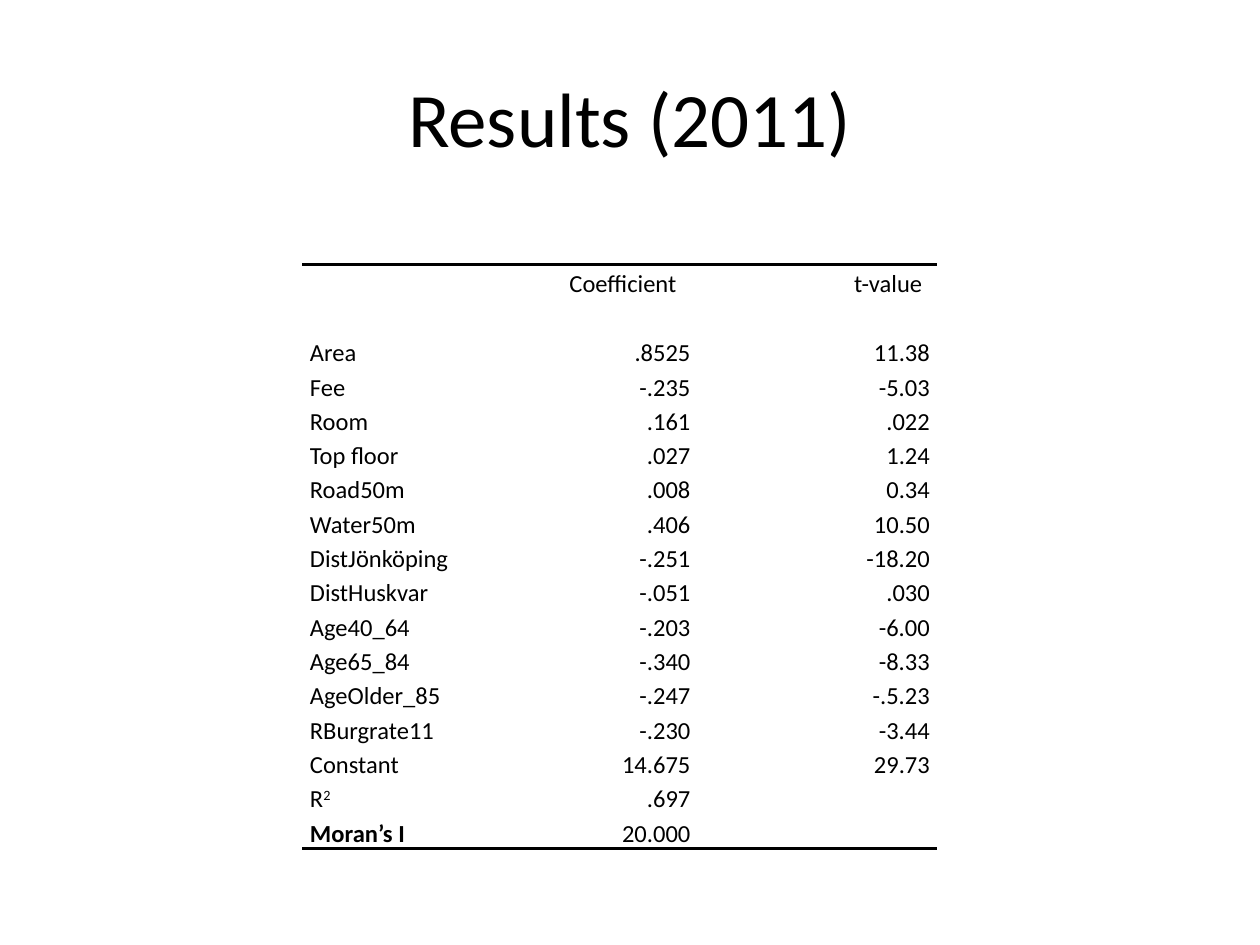
from dataclasses import dataclass

from lxml.etree import SubElement as Sub
from pptx import Presentation
from pptx.dml.color import RGBColor as RGB
from pptx.enum.text import MSO_ANCHOR as Anchor, PP_ALIGN as Align
from pptx.oxml import parse_xml
from pptx.oxml.ns import nsdecls, qn
from pptx.util import Inches, Pt


@dataclass(frozen=True)
class Theme:
    font: str = "Calibri"
    ink: str = "000000"
    paper: str = "FFFFFF"
    head: int = 44
    body: int = 14
    rule: int = 2
    lead: float = 1.15
    pad: float = 0.06
    plain: str = "{2D5ABB26-0587-4C30-8999-92F81FD0307C}"


ROWS = [
    ("Area", ".8525", "11.38"),
    ("Fee", "-.235", "-5.03"),
    ("Room", ".161", ".022"),
    ("Top floor", ".027", "1.24"),
    ("Road50m", ".008", "0.34"),
    ("Water50m", ".406", "10.50"),
    ("DistJönköping", "-.251", "-18.20"),
    ("DistHuskvar", "-.051", ".030"),
    ("Age40_64", "-.203", "-6.00"),
    ("Age65_84", "-.340", "-8.33"),
    ("AgeOlder_85", "-.247", "-.5.23"),
    ("RBurgrate11", "-.230", "-3.44"),
    ("Constant", "14.675", "29.73"),
    ("R", ".697", ""),
    ("Moran’s I", "20.000", ""),
]


class Deck:
    """Holds the theme and the slide being filled."""

    def __init__(self, theme):
        self.theme = theme
        self.prs = Presentation()
        self.prs.slide_width, self.prs.slide_height = Inches(10), Inches(7.5)
        self.slide = self.prs.slides.add_slide(self.prs.slide_layouts[5])

    def box(self, x, y, w, h):
        """Turn shares of the slide into lengths."""
        wide, high = self.prs.slide_width, self.prs.slide_height
        return int(x * wide), int(y * high), int(w * wide), int(h * high)

    def run(self, para, text, size, bold=False):
        run = para.add_run()
        run.text = text
        font = run.font
        font.name, font.size, font.bold = self.theme.font, Pt(size), bold
        font.color.rgb = RGB.from_string(self.theme.ink)
        return run

    def title(self, text, *place):
        shape = self.slide.shapes.title
        shape.left, shape.top, shape.width, shape.height = self.box(*place)
        shape.text_frame.vertical_anchor = Anchor.MIDDLE
        para = shape.text_frame.paragraphs[0]
        para.alignment = Align.CENTER
        self.run(para, text, self.theme.head)

    def table(self, count, cols, *place):
        """Add a plain table; cols are shares of the slide's width."""
        frame = self.slide.shapes.add_table(count, len(cols), *self.box(*place))
        table = frame.table
        table.first_row = table.horz_banding = False
        frame._element.find(".//" + qn("a:tableStyleId")).text = self.theme.plain
        for col, share in zip(table.columns, cols):
            col.width = int(share * self.prs.slide_width)
        return table

    def cell(self, cell, text="", align=Align.LEFT, bold=False):
        theme = self.theme
        cell.margin_left = cell.margin_right = Inches(theme.pad)
        cell.margin_top = cell.margin_bottom = 0
        cell.fill.solid()
        cell.fill.fore_color.rgb = RGB.from_string(theme.paper)
        para = cell.text_frame.paragraphs[0]
        para.alignment, para.line_spacing = align, theme.lead
        if text:
            self.run(para, text, theme.body, bold)
        else:
            Sub(para._p, qn("a:endParaRPr"), sz=str(theme.body * 100))
        return para

    def rule(self, row, side):
        """Draw a line along one side ("T" or "B") of a row."""
        for cell in row.cells:
            line = parse_xml(
                f'<a:ln{side} {nsdecls("a")} w="{Pt(self.theme.rule)}"><a:solidFill>'
                f'<a:srgbClr val="{self.theme.ink}"/></a:solidFill></a:ln{side}>')
            cell._tc.get_or_add_tcPr().insert(0, line)

    def tab(self, para, pos):
        """Set a right tab stop."""
        stops = Sub(para._p.get_or_add_pPr(), qn("a:tabLst"))
        Sub(stops, qn("a:tab"), pos=str(Inches(pos)), algn="r")


def main():
    deck = Deck(Theme())
    deck.title("Results (2011)", 0.05, 0.04, 0.9, 1 / 6)

    step = 0.27
    count = len(ROWS) + 1
    table = deck.table(count, (0.206, 0.108, 0.19),
                       0.24, 0.28, 0.504, step * (count + 1) / 7.5)
    for row in table.rows:
        row.height = Inches(step)
    table.rows[0].height = Inches(2 * step + 0.01)

    for col in range(3):
        text = "Coefficient\tt-value" if col == 1 else ""
        para = deck.cell(table.cell(0, col), text)
        if text:
            deck.tab(para, 2.8)
    table.cell(0, 1).merge(table.cell(0, 2))

    for r, (name, *values) in enumerate(ROWS, 1):
        para = deck.cell(table.cell(r, 0), name, bold=r == len(ROWS))
        if name == "R":
            power = deck.run(para, "2", deck.theme.body)
            power.font._element.set("baseline", "30000")
        for c, value in enumerate(values, 1):
            deck.cell(table.cell(r, c), value, Align.RIGHT)

    deck.rule(table.rows[0], "T")
    deck.rule(table.rows[count - 1], "B")
    deck.prs.save("out.pptx")


if __name__ == "__main__":
    main()
